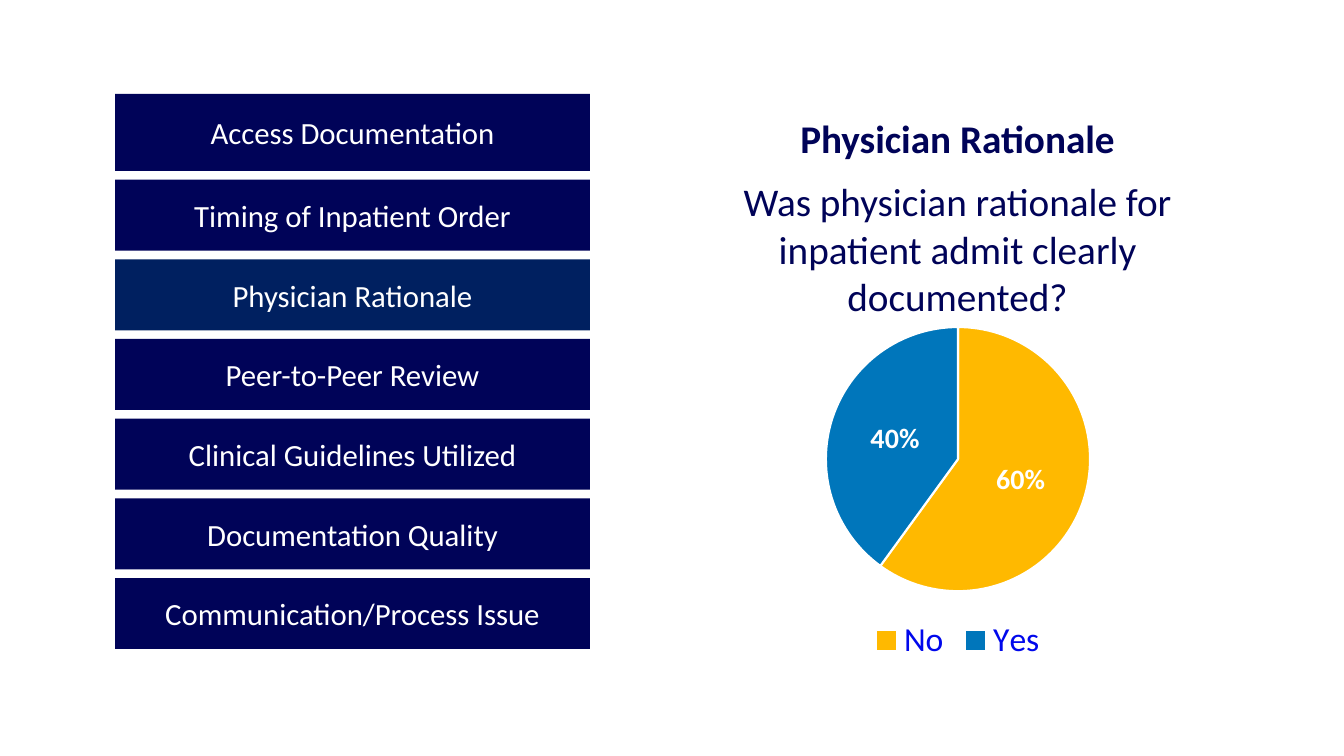
import pptx
import pptx.util
import pptx.chart.data
import pptx.dml.color
import pptx.enum.chart
import pptx.enum.shapes
import pptx.enum.text
import lxml.etree

PX = 914400 / 100.8
FONT = "Calibri"
COLORS = {
    "navy": "000358", "active": "002060", "white": "FFFFFF",
    "no": "FFB900", "yes": "0076BB", "legend": "0008EC",
}
TOPICS = [
    "Access Documentation", "Timing of Inpatient Order", "Physician Rationale",
    "Peer-to-Peer Review", "Clinical Guidelines Utilized",
    "Documentation Quality", "Communication/Process Issue",
]
ACTIVE = "Physician Rationale"
QUESTION = "Was physician rationale for inpatient admit clearly documented?"
SHARES = {"No": 60, "Yes": 40}


def emu(*sizes):
    return [round(size * PX) for size in sizes]


def color(name):
    return pptx.dml.color.RGBColor.from_string(COLORS[name])


def style(font, size, name, bold=False):
    font.name = FONT
    font.size = pptx.util.Pt(size)
    font.bold = bold
    font.color.rgb = color(name)


def add_topics(slide, left, top, width, height):
    """Stack the topic bars; the first is a little taller."""
    first, rest = 77, 71
    count = len(TOPICS) - 1
    gap = (height - first - rest * count) / count
    for topic in TOPICS:
        tall = first if topic == TOPICS[0] else rest
        bar = slide.shapes.add_shape(
            pptx.enum.shapes.MSO_SHAPE.RECTANGLE, *emu(left, top, width, tall))
        bar.shadow.inherit = False
        bar.fill.solid()
        bar.fill.fore_color.rgb = color("active" if topic == ACTIVE else "navy")
        bar.line.fill.background()
        frame = bar.text_frame
        frame.word_wrap = True
        frame.vertical_anchor = pptx.enum.text.MSO_ANCHOR.MIDDLE
        para = frame.paragraphs[0]
        para.text = topic
        para.alignment = pptx.enum.text.PP_ALIGN.CENTER
        style(para.font, 22, "white")
        top += tall + gap


def add_heading(slide, left, top, width, height):
    """Place the topic title and its question."""
    frame = slide.shapes.add_textbox(*emu(left, top, width, height)).text_frame
    frame.word_wrap = True
    title = frame.paragraphs[0]
    title.text = ACTIVE
    query = frame.add_paragraph()
    query.text = QUESTION
    query.space_before = pptx.util.Pt(12)
    for para in (title, query):
        para.alignment = pptx.enum.text.PP_ALIGN.CENTER
        style(para.font, 28, "navy", bold=para is title)


def add_pie(slide, left, top, width, height):
    """Draw the answer shares as a pie with a legend below."""
    data = pptx.chart.data.CategoryChartData()
    data.categories = list(SHARES)
    data.add_series("Series 1", list(SHARES.values()))
    chart = slide.shapes.add_chart(
        pptx.enum.chart.XL_CHART_TYPE.PIE,
        *emu(left, top, width, height), data).chart
    chart.has_title = False
    style(chart.font, 10, "navy")

    # Legend
    chart.has_legend = True
    chart.legend.position = pptx.enum.chart.XL_LEGEND_POSITION.BOTTOM
    chart.legend.include_in_layout = False
    style(chart.legend.font, 24, "legend")

    # Slices and labels
    plot = chart.plots[0]
    plot.vary_by_categories = True
    series = plot.series[0]
    for index, name in enumerate(("no", "yes")):
        form = series.points[index].format
        form.fill.solid()
        form.fill.fore_color.rgb = color(name)
        form.line.color.rgb = color("white")
        form.line.width = pptx.util.Pt(1.5)
    labels = series.data_labels
    labels.show_percentage = True
    labels.show_value = False
    labels.number_format = "0%"
    labels.number_format_is_linked = False
    labels.position = pptx.enum.chart.XL_LABEL_POSITION.CENTER
    style(labels.font, 20, "white", bold=True)

    # Plot area, as fractions of the chart
    space = "http://schemas.openxmlformats.org/drawingml/2006/chart"
    area = chart.element.find(f".//{{{space}}}plotArea")
    for old in area.findall(f"{{{space}}}layout"):
        area.remove(old)
    layout = lxml.etree.Element(f"{{{space}}}layout")
    manual = lxml.etree.SubElement(layout, f"{{{space}}}manualLayout")
    for tag, value in (
            ("layoutTarget", "inner"), ("xMode", "edge"), ("yMode", "edge"),
            ("x", 0.24), ("y", 0.04), ("w", 0.52), ("h", 0.75)):
        lxml.etree.SubElement(manual, f"{{{space}}}{tag}", val=str(value))
    area.insert(0, layout)


def main():
    deck = pptx.Presentation()
    deck.slide_width, deck.slide_height = emu(1344, 756)
    slide = deck.slides.add_slide(deck.slide_layouts[6])
    add_heading(slide, 686, 109, 543, 265)
    add_pie(slide, 704, 311, 508, 357)
    add_topics(slide, 115, 94, 475, 555)
    deck.save("out.pptx")


if __name__ == "__main__":
    main()
